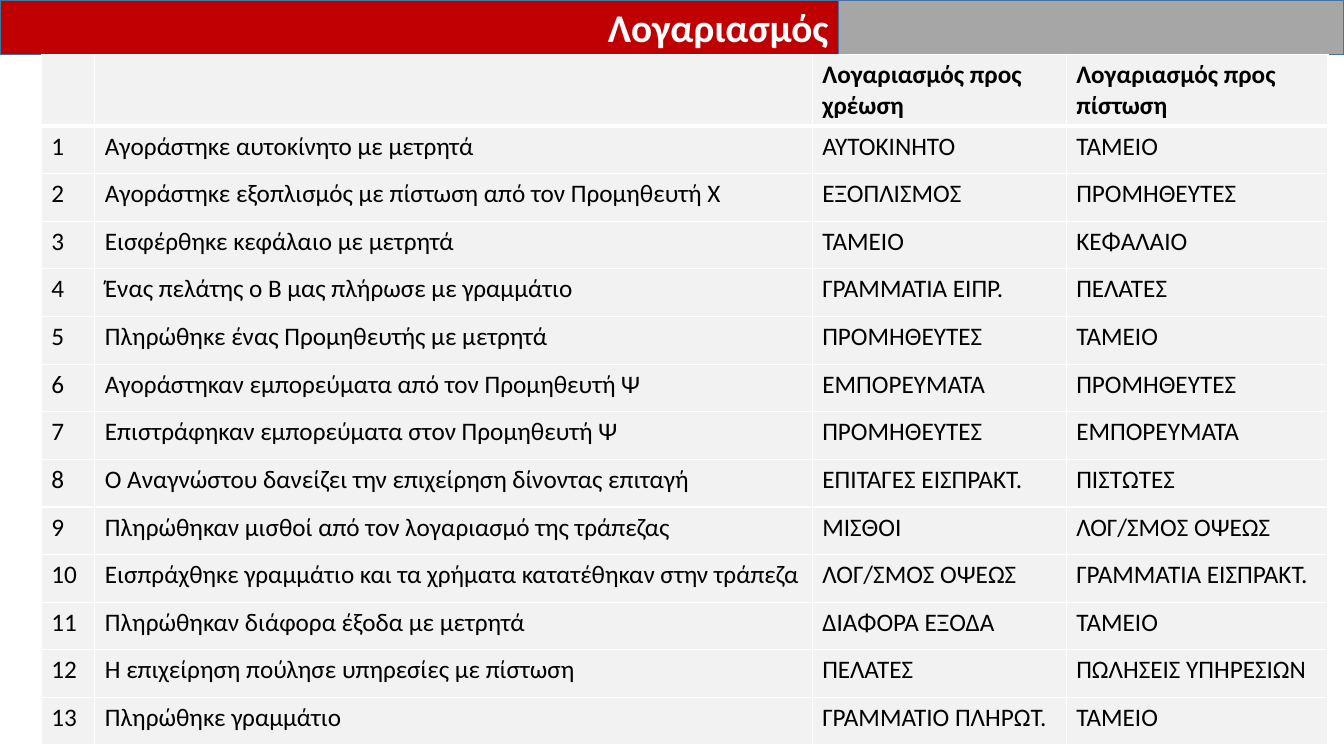
"""Build a slide that lists the accounts to debit and credit for each event."""
from typing import NamedTuple

from lxml.etree import SubElement
from pptx import Presentation
from pptx.dml.color import RGBColor
from pptx.enum.shapes import MSO_SHAPE
from pptx.enum.text import MSO_ANCHOR, PP_ALIGN
from pptx.oxml.ns import qn
from pptx.util import Cm, Pt

HUES = {
    "red": "C00000",
    "gray": "A6A6A6",
    "edge": "43739E",
    "cell": "F2F2F2",
    "white": "FFFFFF",
    "black": "000000",
}
FONT = "Calibri"
WIDE, HIGH = 33.87, 19.05
BAR, SPLIT = 1.37, 21.13
LEFT = 1.04
COLS = (1.35, 18.08, 6.4, 6.6)
HEAD, ROW = 1.78, 1.2


class Entry(NamedTuple):
    event: str
    debit: str
    credit: str


ENTRIES = (
    Entry("Αγοράστηκε αυτοκίνητο με μετρητά", "ΑΥΤΟΚΙΝΗΤΟ", "ΤΑΜΕΙΟ"),
    Entry("Αγοράστηκε εξοπλισμός με πίστωση από τον Προμηθευτή Χ", "ΕΞΟΠΛΙΣΜΟΣ", "ΠΡΟΜΗΘΕΥΤΕΣ"),
    Entry("Εισφέρθηκε κεφάλαιο με μετρητά", "ΤΑΜΕΙΟ", "ΚΕΦΑΛΑΙΟ"),
    Entry("Ένας πελάτης ο Β μας πλήρωσε με γραμμάτιο", "ΓΡΑΜΜΑΤΙΑ ΕΙΠΡ.", "ΠΕΛΑΤΕΣ"),
    Entry("Πληρώθηκε ένας Προμηθευτής με μετρητά", "ΠΡΟΜΗΘΕΥΤΕΣ", "ΤΑΜΕΙΟ"),
    Entry("Αγοράστηκαν εμπορεύματα από τον Προμηθευτή Ψ", "ΕΜΠΟΡΕΥΜΑΤΑ", "ΠΡΟΜΗΘΕΥΤΕΣ"),
    Entry("Επιστράφηκαν εμπορεύματα στον Προμηθευτή Ψ", "ΠΡΟΜΗΘΕΥΤΕΣ", "ΕΜΠΟΡΕΥΜΑΤΑ"),
    Entry("Ο Αναγνώστου δανείζει την επιχείρηση δίνοντας επιταγή", "ΕΠΙΤΑΓΕΣ ΕΙΣΠΡΑΚΤ.", "ΠΙΣΤΩΤΕΣ"),
    Entry("Πληρώθηκαν μισθοί από τον λογαριασμό της τράπεζας", "ΜΙΣΘΟΙ", "ΛΟΓ/ΣΜΟΣ ΟΨΕΩΣ"),
    Entry("Εισπράχθηκε γραμμάτιο και τα χρήματα κατατέθηκαν στην τράπεζα", "ΛΟΓ/ΣΜΟΣ ΟΨΕΩΣ", "ΓΡΑΜΜΑΤΙΑ ΕΙΣΠΡΑΚΤ."),
    Entry("Πληρώθηκαν διάφορα έξοδα με μετρητά", "ΔΙΑΦΟΡΑ ΕΞΟΔΑ", "ΤΑΜΕΙΟ"),
    Entry("Η επιχείρηση πούλησε υπηρεσίες με πίστωση", "ΠΕΛΑΤΕΣ", "ΠΩΛΗΣΕΙΣ ΥΠΗΡΕΣΙΩΝ"),
    Entry("Πληρώθηκε γραμμάτιο", "ΓΡΑΜΜΑΤΙΟ ΠΛΗΡΩΤ.", "ΤΑΜΕΙΟ"),
)


def tint(name: str) -> RGBColor:
    return RGBColor.from_string(HUES[name])


def style(para, size: float, hue: str, bold: bool) -> None:
    for run in para.runs:
        run.font.name = FONT
        run.font.size = Pt(size)
        run.font.bold = bold
        run.font.color.rgb = tint(hue)


def paint(shape, hue: str) -> None:
    shape.fill.solid()
    shape.fill.fore_color.rgb = tint(hue)
    shape.line.color.rgb = tint("edge")
    shape.line.width = Pt(1)


def add_bars(slide) -> None:
    title = slide.shapes.title
    title.left, title.top, title.width, title.height = Cm(0), Cm(0), Cm(SPLIT), Cm(BAR)
    paint(title, "red")
    frame = title.text_frame
    frame.text = "Λογαριασμός"
    frame.vertical_anchor = MSO_ANCHOR.MIDDLE
    para = frame.paragraphs[0]
    para.alignment = PP_ALIGN.RIGHT
    style(para, 28, "white", True)
    side = slide.shapes.add_shape(MSO_SHAPE.RECTANGLE, Cm(SPLIT), Cm(0), Cm(WIDE - SPLIT), Cm(BAR))
    side.shadow.inherit = False
    paint(side, "gray")


def add_edge(cell, side: str, width: float) -> None:
    props = cell._tc.get_or_add_tcPr()
    line = SubElement(props, qn(f"a:ln{side}"), w=str(Pt(width)))
    fill = SubElement(line, qn("a:solidFill"))
    SubElement(fill, qn("a:srgbClr"), val=HUES["white"])


def fill_cell(cell, text: str, row: int) -> None:
    edges = {"L": 1, "R": 1, "T": 3 if row == 1 else 1, "B": 3 if row == 0 else 1}
    for side, width in edges.items():
        add_edge(cell, side, width)
    cell.fill.solid()
    cell.fill.fore_color.rgb = tint("cell")
    if text:
        cell.text_frame.text = text
        style(cell.text_frame.paragraphs[0], 18, "black", row == 0)


def add_grid(slide) -> None:
    rows = [("", "", "Λογαριασμός προς χρέωση", "Λογαριασμός προς πίστωση")]
    rows += [(str(num), *entry) for num, entry in enumerate(ENTRIES, 1)]
    tall = HEAD + ROW * len(ENTRIES)
    table = slide.shapes.add_table(
        len(rows), len(COLS), Cm(LEFT), Cm(BAR), Cm(sum(COLS)), Cm(tall)
    ).table
    for col, width in zip(table.columns, COLS):
        col.width = Cm(width)
    for row, texts in enumerate(rows):
        table.rows[row].height = Cm(ROW if row else HEAD)
        for col, text in enumerate(texts):
            fill_cell(table.cell(row, col), text, row)


def main() -> None:
    deck = Presentation()
    deck.slide_width, deck.slide_height = Cm(WIDE), Cm(HIGH)
    slide = deck.slides.add_slide(deck.slide_layouts[5])
    add_bars(slide)
    add_grid(slide)
    deck.save("out.pptx")


if __name__ == "__main__":
    main()
